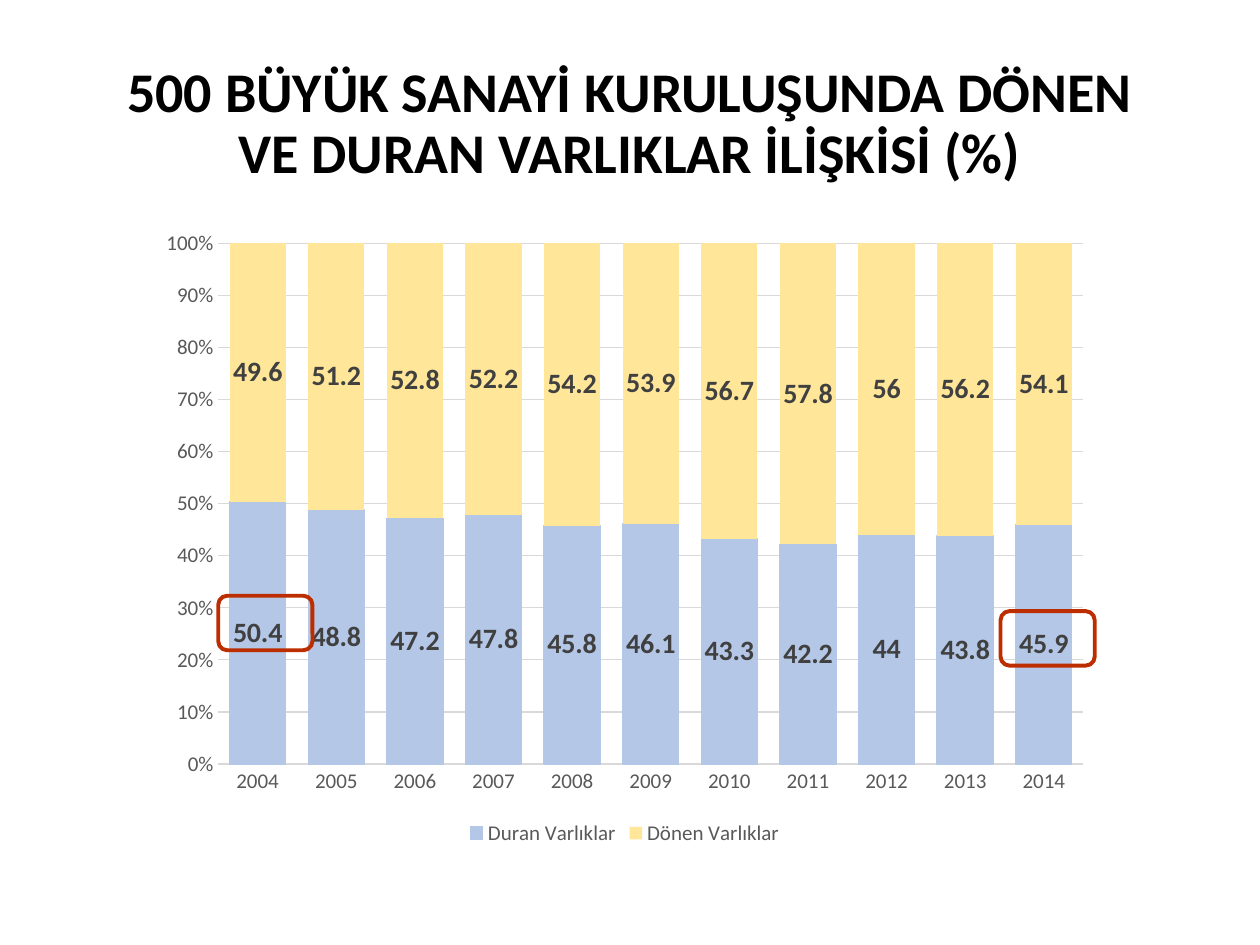
from dataclasses import dataclass
from typing import Any

from pptx import Presentation
from pptx.chart.data import CategoryChartData
from pptx.dml.color import RGBColor
from pptx.enum.chart import (XL_CHART_TYPE, XL_LABEL_POSITION,
                             XL_LEGEND_POSITION, XL_TICK_MARK)
from pptx.enum.shapes import MSO_SHAPE
from pptx.enum.text import MSO_ANCHOR, PP_ALIGN
from pptx.util import Cm, Pt


@dataclass
class Box:
    left: float
    top: float
    width: float
    height: float

    def place(self) -> tuple:
        return Cm(self.left), Cm(self.top), Cm(self.width), Cm(self.height)


@dataclass
class Series:
    name: str
    color: str
    values: list[float]
    edged: bool


def paint(color: str) -> RGBColor:
    return RGBColor.from_string(color)


def apply(target: Any, values: dict[str, Any]) -> None:
    for name, value in values.items():
        setattr(target, name, value)


def style(font: Any, size: float, color: str, bold: bool = False) -> None:
    apply(font, {"name": "Calibri", "size": Pt(size), "bold": bold})
    font.color.rgb = paint(color)


def stroke(line: Any, color: str, width: float) -> None:
    line.color.rgb = paint(color)
    line.width = Pt(width)


def add_title(slide: Any, box: Box, text: str) -> None:
    frame = slide.shapes.add_textbox(*box.place()).text_frame
    apply(frame, {"word_wrap": True, "vertical_anchor": MSO_ANCHOR.BOTTOM})
    para = frame.paragraphs[0]
    apply(para, {"alignment": PP_ALIGN.CENTER, "line_spacing": 0.9})
    run = para.add_run()
    run.text = text
    style(run.font, 32, "000000", True)


def add_bars(slide: Any, box: Box, years: list[str], rows: list[Series]) -> None:
    data = CategoryChartData(number_format="General")
    data.categories = years
    for row in rows:
        data.add_series(row.name, row.values)
    chart = slide.shapes.add_chart(
        XL_CHART_TYPE.COLUMN_STACKED_100, *box.place(), data).chart
    apply(chart, {"has_title": False, "has_legend": True})
    style(chart.font, 10, "000000")
    apply(chart.legend, {"position": XL_LEGEND_POSITION.BOTTOM,
                         "include_in_layout": False})
    style(chart.legend.font, 12, "595959")

    base, scale = chart.category_axis, chart.value_axis
    for axis in (base, scale):
        apply(axis, {"major_tick_mark": XL_TICK_MARK.NONE,
                     "minor_tick_mark": XL_TICK_MARK.NONE})
        style(axis.tick_labels.font, 12, "595959")
    stroke(base.format.line, "D9D9D9", 0.75)
    scale.format.line.fill.background()
    apply(scale, {"has_major_gridlines": True, "minimum_scale": 0,
                  "maximum_scale": 1, "major_unit": 0.1})
    stroke(scale.major_gridlines.format.line, "D9D9D9", 0.75)
    apply(scale.tick_labels, {"number_format": "0%",
                              "number_format_is_linked": False})

    plot = chart.plots[0]
    apply(plot, {"gap_width": 40, "overlap": 100, "vary_by_categories": False})
    for item, row in zip(plot.series, rows):
        item.invert_if_negative = False
        item.format.fill.solid()
        item.format.fill.fore_color.rgb = paint(row.color)
        if row.edged:
            stroke(item.format.line, row.color, 0.75)
        labels = item.data_labels
        apply(labels, {"show_value": True,
                       "position": XL_LABEL_POSITION.CENTER})
        style(labels.font, 16, "404040", True)


def add_frame(slide: Any, box: Box) -> None:
    shape = slide.shapes.add_shape(MSO_SHAPE.ROUNDED_RECTANGLE, *box.place())
    shape.shadow.inherit = False
    shape.fill.background()
    stroke(shape.line, "BC2D00", 2.25)


TITLE = "500 BÜYÜK SANAYİ KURULUŞUNDA DÖNEN VE DURAN VARLIKLAR İLİŞKİSİ (%)"
YEARS = [str(year) for year in range(2004, 2015)]
ROWS = [
    Series("Duran Varlıklar", "B4C7E7",
           [50.4, 48.8, 47.2, 47.8, 45.8, 46.1, 43.3, 42.2, 44, 43.8, 45.9], True),
    Series("Dönen Varlıklar", "FFE699",
           [49.6, 51.2, 52.8, 52.2, 54.2, 53.9, 56.7, 57.8, 56, 56.2, 54.1], False),
]
FRAMES = [Box(4.4, 12.01, 1.9, 1.1), Box(20.17, 12.32, 1.9, 1.1)]


def main() -> None:
    deck = Presentation()
    apply(deck, {"slide_width": Cm(25.4), "slide_height": Cm(19.05)})
    slide = deck.slides.add_slide(deck.slide_layouts[6])
    add_title(slide, Box(1.9, 0.76, 21.6, 3.1), TITLE)
    add_bars(slide, Box(2.97, 4.4, 19.25, 12.75), YEARS, ROWS)
    for box in FRAMES:
        add_frame(slide, box)
    deck.save("out.pptx")


if __name__ == "__main__":
    main()
